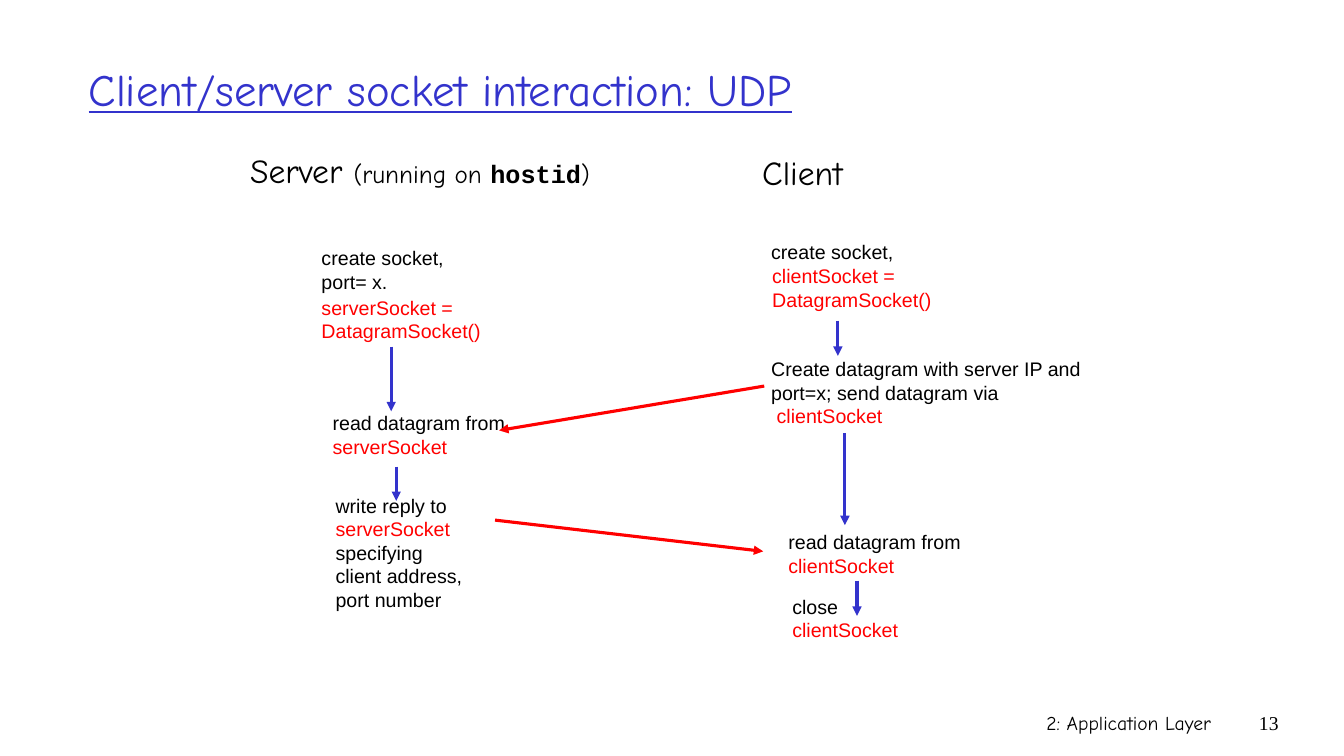
from pptx import Presentation
from pptx.dml.color import RGBColor
from pptx.enum.shapes import MSO_CONNECTOR
from pptx.enum.text import MSO_ANCHOR, PP_ALIGN
from pptx.oxml.ns import qn
from pptx.util import Inches, Pt
from lxml.etree import SubElement

THEME = {
    "black": RGBColor(0x00, 0x00, 0x00),
    "blue": RGBColor(0x33, 0x33, 0xCC),
    "red": RGBColor(0xFF, 0x00, 0x00),
    "display": "Comic Neue",
    "body": "Arial",
    "code": "Courier New",
    "number": "Times New Roman",
    "title_pt": 32,
    "head_pt": 24,
    "sub_pt": 18,
    "body_pt": 14,
    "line_pt": 2.25,
}

# Content: box = left, top, width, height; run = text, font, size
TITLE = ("Client/server socket interaction: UDP", (0.78, 0.25, 11.33, 1.25))
HEADINGS = [
    ((2.31, 1.44, 3.71, 0.5), [
        ("Server ", "display", "head_pt"),
        ("(running on ", "display", "sub_pt"),
        ("hostid", "code", "sub_pt"),
        (")", "display", "sub_pt"),
    ]),
    ((7.41, 1.46, 1.1, 0.5), [("Client", "display", "head_pt")]),
]
FOOTER = [
    ("2: Application Layer", "display", (7.89, 7, 4.22, 0.5)),
    ("13", "number", (12.11, 7, 0.67, 0.5)),
]

# Steps: each line is text and colour
SERVER_STEPS = [
    ((3.09, 2.39, 1.42, 0.57), [("create socket,", "black"), ("port= x.", "black")]),
    ((3.09, 2.88, 1.79, 0.57), [("serverSocket =", "red"), ("DatagramSocket()", "red")]),
    ((3.2, 4.03, 1.92, 0.57), [("read datagram from", "black"), ("serverSocket", "red")]),
    ((3.23, 4.84, 1.46, 1.28), [
        ("write reply to", "black"),
        ("serverSocket", "red"),
        ("specifying", "black"),
        ("client address,", "black"),
        ("port number", "black"),
    ]),
]
CLIENT_STEPS = [
    ((7.55, 2.33, 1.42, 0.34), [("create socket,", "black")]),
    ((7.56, 2.57, 1.79, 0.57), [("clientSocket =", "red"), ("DatagramSocket()", "red")]),
    ((7.55, 3.49, 3.29, 0.81), [
        ("Create datagram with server IP and", "black"),
        ("port=x; send datagram via", "black"),
        (" clientSocket", "red"),
    ]),
    ((7.72, 5.21, 1.92, 0.57), [("read datagram from", "black"), ("clientSocket", "red")]),
    ((7.76, 5.85, 1.26, 0.57), [("close", "black"), ("clientSocket", "red")]),
]

# Downward arrows within a column: x, start y, end y
STEP_ARROWS = [
    (3.88, 3.44, 4.08), (3.93, 4.63, 4.97),
    (8.31, 3.18, 3.53), (8.38, 4.3, 5.21), (8.5, 5.76, 6.11),
]
# Datagrams between the columns: start x, y, end x, y
DATAGRAM_ARROWS = [(7.58, 3.83, 4.95, 4.27), (4.91, 5.16, 7.57, 5.47)]


def add_box(s, box, anchor=MSO_ANCHOR.MIDDLE, wrap=False):
    tf = s.shapes.add_textbox(*map(Inches, box)).text_frame
    tf.word_wrap = wrap
    tf.vertical_anchor = anchor
    return tf


def style(r, font, size, color="black"):
    r.font.name = THEME[font]
    r.font.size = Pt(THEME[size])
    r.font.color.rgb = THEME[color]


def add_step(s, box, lines):
    tf = add_box(s, box)
    tf.text = "\n".join(text for text, _ in lines)
    for p, (_, color) in zip(tf.paragraphs, lines):
        style(p.runs[0], "body", "body_pt", color)


def add_arrow(s, x1, y1, x2, y2, color):
    line = s.shapes.add_connector(MSO_CONNECTOR.STRAIGHT, *map(Inches, (x1, y1, x2, y2)))
    line.line.color.rgb = THEME[color]
    line.line.width = Pt(THEME["line_pt"])
    SubElement(line.line._get_or_add_ln(), qn("a:tailEnd"), type="triangle")
    SubElement(line._element.spPr, qn("a:effectLst"))


def main():
    prs = Presentation()
    prs.slide_width, prs.slide_height = Inches(13.33), Inches(7.5)
    s = prs.slides.add_slide(prs.slide_layouts[6])

    # Title
    text, box = TITLE
    tf = add_box(s, box, wrap=True)
    tf.text = text
    r = tf.paragraphs[0].runs[0]
    style(r, "display", "title_pt", "blue")
    r.font.underline = True

    # Column headings
    for box, runs in HEADINGS:
        p = add_box(s, box).paragraphs[0]
        p.alignment = PP_ALIGN.CENTER
        for text, font, size in runs:
            r = p.add_run()
            r.text = text
            style(r, font, size)
            r.font.bold = font == "code"

    # Steps and arrows
    for box, lines in SERVER_STEPS + CLIENT_STEPS:
        add_step(s, box, lines)
    for x, y1, y2 in STEP_ARROWS:
        add_arrow(s, x, y1, x, y2, "blue")
    for ends in DATAGRAM_ARROWS:
        add_arrow(s, *ends, "red")

    # Footer
    for text, font, box in FOOTER:
        tf = add_box(s, box, MSO_ANCHOR.TOP, wrap=True)
        tf.text = text
        tf.paragraphs[0].alignment = PP_ALIGN.RIGHT
        style(tf.paragraphs[0].runs[0], font, "body_pt")

    prs.save("out.pptx")


if __name__ == "__main__":
    main()
